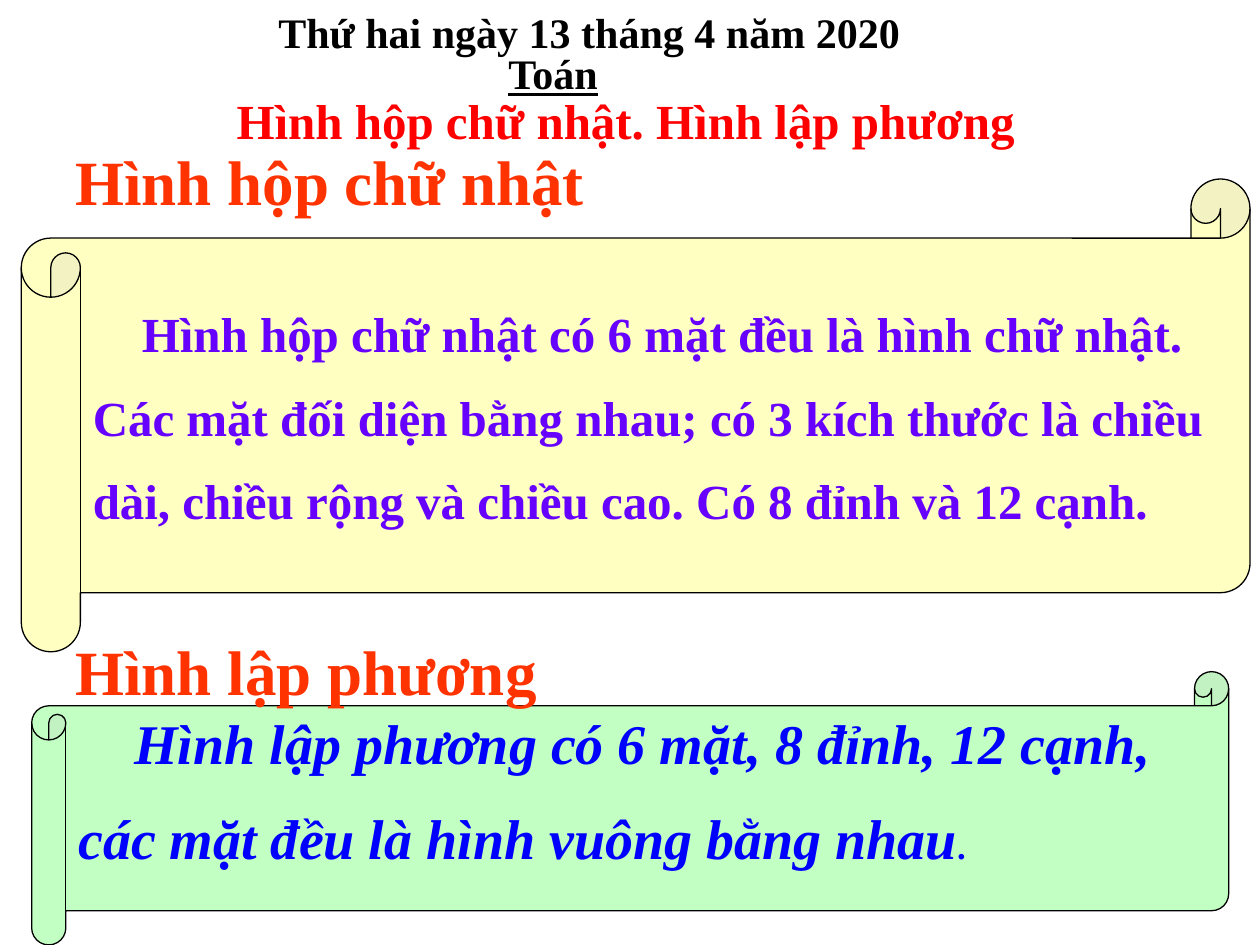
from pptx import Presentation
from pptx.dml.color import RGBColor
from pptx.enum.shapes import MSO_SHAPE
from pptx.enum.text import MSO_ANCHOR, PP_ALIGN
from pptx.oxml.ns import qn
from pptx.util import Cm, Pt
from lxml import etree

SCROLL = MSO_SHAPE.HORIZONTAL_SCROLL
MIDDLE = MSO_ANCHOR.MIDDLE
LEFT, CENTER = PP_ALIGN.LEFT, PP_ALIGN.CENTER

FONT = "Times New Roman"
BLACK = RGBColor(0x00, 0x00, 0x00)
RED = RGBColor(0xFF, 0x00, 0x00)
ORANGE = RGBColor(0xFF, 0x33, 0x00)
VIOLET = RGBColor(0x66, 0x00, 0xFF)
BLUE = RGBColor(0x00, 0x00, 0xFF)
YELLOW = RGBColor(0xFF, 0xFF, 0x00)
GREEN = RGBColor(0x00, 0xFF, 0x00)


def add_text(p, text, size, color, bold=True, italic=False, underline=False):
    """Append a formatted run to a paragraph."""
    r = p.add_run()
    r.text = text
    f = r.font
    f.name, f.size, f.color.rgb = FONT, Pt(size), color
    f.bold, f.italic, f.underline = bold, italic, underline


def add_label(s, box, text, align=LEFT, **fmt):
    """Place a one-line text box."""
    tf = s.shapes.add_textbox(*map(Cm, box)).text_frame
    tf.word_wrap = True
    p = tf.paragraphs[0]
    p.alignment = align
    add_text(p, text, **fmt)


def add_scroll(s, box, fill, lines, gap, top=0.13, bottom=0.13):
    """Place a translucent scroll whose first line is indented; lines hold runs."""
    sp = s.shapes.add_shape(SCROLL, *map(Cm, box))
    sp.shadow.inherit = False
    sp.adjustments[0] = 0.125
    sp.fill.solid()
    sp.fill.fore_color.rgb = fill
    clr = sp.fill._xPr.find(qn("a:solidFill"))[0]
    etree.SubElement(clr, qn("a:alpha")).set("val", "24000")
    sp.line.color.rgb = BLACK
    sp.line.width = Pt(0.75)
    tf = sp.text_frame
    tf.word_wrap = True
    tf.vertical_anchor = MIDDLE
    tf.margin_top, tf.margin_bottom, tf.margin_right = Cm(top), Cm(bottom), Cm(0)
    for i, runs in enumerate(lines):
        p = tf.add_paragraph() if i else tf.paragraphs[0]
        p.alignment = LEFT
        if i:
            p.space_before = Pt(gap)
        else:
            size = runs[0][1]["size"]
            p._p.get_or_add_pPr().set("indent", str(Pt(size)))
        for text, fmt in runs:
            add_text(p, text, **fmt)


def add_heading(s, left, top):
    """Place the date, subject and lesson title relative to a corner."""
    add_label(s, (left, top, 18.97, 1.27), "Thứ hai ngày 13 tháng 4 năm 2020",
              CENTER, size=24, color=BLACK)
    add_label(s, (left + 7.21, top + 0.84, 3.1, 1.27), "Toán",
              CENTER, size=24, color=BLACK, underline=True)
    add_label(s, (left + 2.13, top + 1.7, 17.07, 1.45),
              "Hình hộp chữ nhật. Hình lập phương", size=28, color=RED)


def main():
    """Build the lesson slide."""
    prs = Presentation()
    prs.slide_width, prs.slide_height = Cm(25.4), Cm(19.05)
    s = prs.slides.add_slide(prs.slide_layouts[6])

    cuboid = dict(size=28, color=VIOLET)
    cube = dict(size=32, color=BLUE, italic=True)
    add_scroll(s, (0.43, 3.61, 24.77, 9.53), YELLOW, [
        [("Hình hộp chữ nhật có 6 mặt đều là hình chữ nhật.", cuboid)],
        [("Các mặt đối diện bằng nhau; có 3 kích thước là chiều", cuboid)],
        [("dài, chiều rộng và chiều cao. Có 8 đỉnh và 12 cạnh.", cuboid)],
    ], gap=14, top=0.18)
    add_scroll(s, (0.64, 13.54, 24.13, 5.51), GREEN, [
        [("Hình lập phương có 6 mặt, 8 đỉnh, 12 cạnh,", cube)],
        [("các mặt đều là hình vuông bằng nhau", cube),
         (".", {**cube, "size": 20})],
    ], gap=16, bottom=0.87)

    for text, top, width in (("Hình hộp chữ nhật", 2.74, 11.2),
                             ("Hình lập phương", 12.62, 10.4)):
        add_label(s, (1.27, top, width, 1.78), text, size=36, color=ORANGE)
    add_heading(s, 2.39, 0)
    prs.save("out.pptx")


if __name__ == "__main__":
    main()
